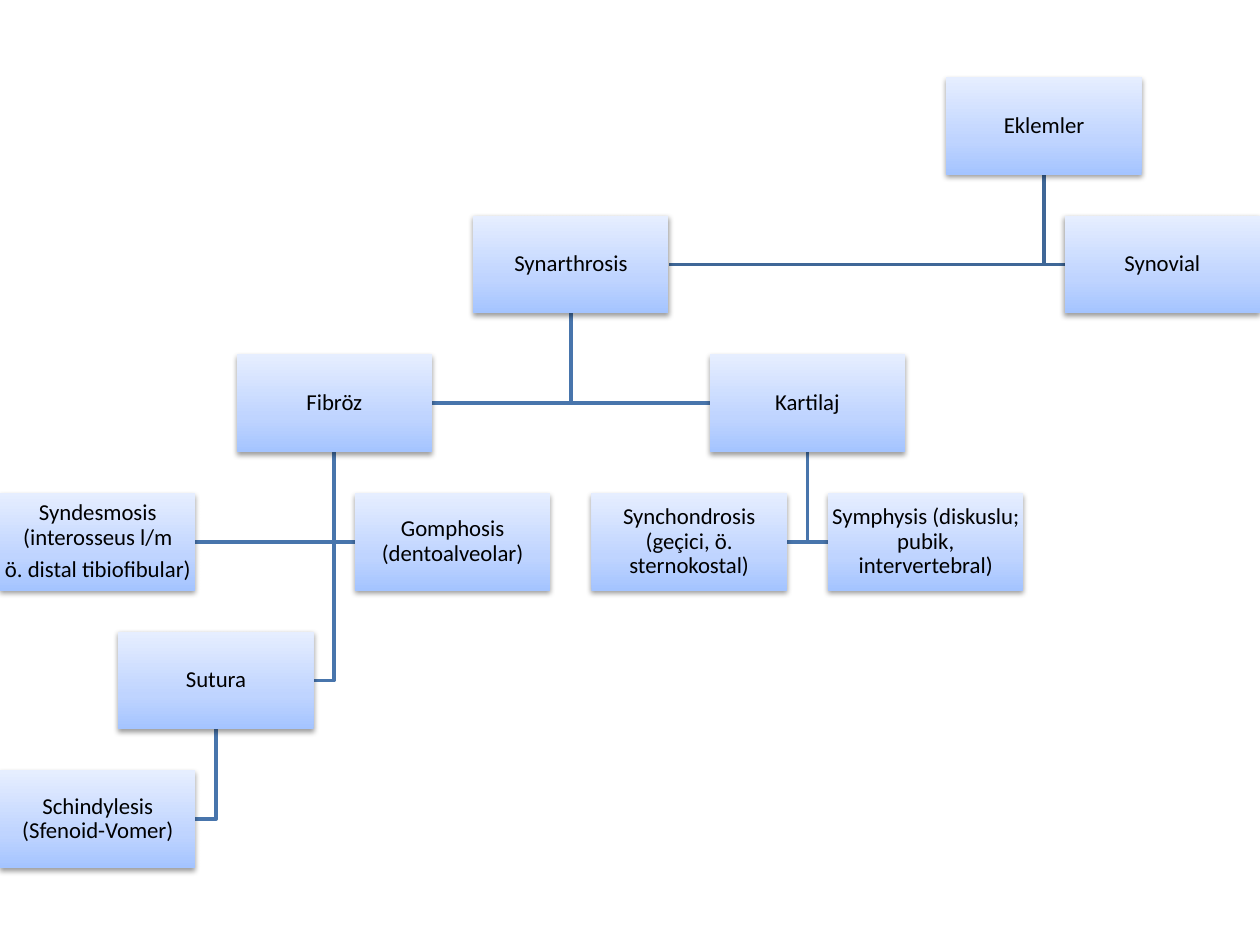
from copy import deepcopy

from lxml.etree import SubElement
from pptx import Presentation
from pptx.dml.color import RGBColor
from pptx.enum.shapes import MSO_SHAPE
from pptx.enum.text import MSO_ANCHOR, PP_ALIGN
from pptx.oxml.ns import qn
from pptx.util import Cm, Pt

COLORS = {
    "bottom": "A4C4FF",
    "middle": "BFD4FF",
    "top": "E6EEFF",
    "root_link": "3F6797",
    "link": "4875AC",
    "text": "000000",
    "shadow": "000000",
}
STOPS = [(0, "bottom"), (0.35, "middle"), (1, "top")]
BOX_W, BOX_H = Cm(3.94), Cm(1.97)
ROOT = "Eklemler"
COLUMNS, ROWS = 10, 6

# name: (column, row, parent, paragraphs)
NODES = {
    ROOT: (8, 0, None, [ROOT]),
    "Synarthrosis": (4, 1, ROOT, ["Synarthrosis"]),
    "Synovial": (9, 1, ROOT, ["Synovial"]),
    "Fibröz": (2, 2, "Synarthrosis", ["Fibröz"]),
    "Kartilaj": (6, 2, "Synarthrosis", ["Kartilaj"]),
    "Syndesmosis": (0, 3, "Fibröz",
                    ["Syndesmosis (interosseus l/m", "ö. distal tibiofibular)"]),
    "Gomphosis": (3, 3, "Fibröz", ["Gomphosis (dentoalveolar)"]),
    "Sutura": (1, 4, "Fibröz", ["Sutura"]),
    "Schindylesis": (0, 5, "Sutura", ["Schindylesis (Sfenoid-Vomer)"]),
    "Synchondrosis": (5, 3, "Kartilaj", ["Synchondrosis (geçici, ö. sternokostal)"]),
    "Symphysis": (7, 3, "Kartilaj", ["Symphysis (diskuslu; pubik, intervertebral)"]),
}


def rgb(name):
    """Return the named colour."""
    return RGBColor.from_string(COLORS[name])


def fill_gradient(sp):
    """Fill a shape with the three-stop vertical gradient."""
    sp.fill.gradient()
    sp.fill.gradient_angle = 90
    stops = sp._element.spPr.find(qn("a:gradFill")).find(qn("a:gsLst"))
    stops.append(deepcopy(stops[0]))
    for stop, (position, color) in zip(sp.fill.gradient_stops, STOPS):
        stop.position = position
        stop.color.rgb = rgb(color)


def add_shadow(sp):
    """Give a shape a soft shadow below it."""
    sp.shadow.inherit = False
    effects = sp._element.spPr.find(qn("a:effectLst"))
    shadow = SubElement(effects, qn("a:outerShdw"), blurRad="40000",
                        dist="20000", dir="5400000", rotWithShape="0")
    color = SubElement(shadow, qn("a:srgbClr"), val=COLORS["shadow"])
    SubElement(color, qn("a:alpha"), val="38000")


def add_node(slide, left, top, lines):
    """Draw one labelled box of the tree."""
    sp = slide.shapes.add_shape(MSO_SHAPE.RECTANGLE, left, top, BOX_W, BOX_H)
    fill_gradient(sp)
    sp.line.fill.background()
    add_shadow(sp)
    tf = sp.text_frame
    tf.word_wrap = True
    tf.vertical_anchor = MSO_ANCHOR.MIDDLE
    tf.margin_left = tf.margin_right = tf.margin_top = tf.margin_bottom = Cm(0.02)
    for i, line in enumerate(lines):
        p = tf.add_paragraph() if i else tf.paragraphs[0]
        p.text = line
        p.alignment = PP_ALIGN.CENTER
        p.line_spacing = 0.9
        p.space_after = Pt(4.5)
        p.font.name = "Calibri"
        p.font.size = Pt(13)
        p.font.color.rgb = rgb("text")


def add_link(slide, parent, child, color):
    """Draw an elbow from the parent's bottom to the child's near side."""
    x, y = parent[0] + BOX_W // 2, parent[1] + BOX_H
    end_x = child[0] if child[0] > parent[0] else child[0] + BOX_W
    end_y = child[1] + BOX_H // 2
    builder = slide.shapes.build_freeform(x, y)
    builder.add_line_segments([(x, end_y), (end_x, end_y)], close=False)
    sp = builder.convert_to_shape()
    sp.fill.background()
    sp.line.color.rgb = rgb(color)
    sp.line.width = Pt(2)
    sp.shadow.inherit = False


def add_tree(slide, left, top, width, height):
    """Lay the joint classification out on a grid within a box."""
    step_x = (width - BOX_W) / (COLUMNS - 1)
    step_y = (height - BOX_H) / (ROWS - 1)
    places = {name: (int(left + column * step_x), int(top + row * step_y))
              for name, (column, row, _, _) in NODES.items()}
    for name, (_, _, parent, _) in NODES.items():
        if parent:
            color = "root_link" if parent == ROOT else "link"
            add_link(slide, places[parent], places[name], color)
    for name, (_, _, _, lines) in NODES.items():
        add_node(slide, *places[name], lines)


def main():
    """Build and save the slide."""
    prs = Presentation()
    prs.slide_width, prs.slide_height = Cm(25.4), Cm(19.05)
    slide = prs.slides.add_slide(prs.slide_layouts[6])
    add_tree(slide, Cm(0), Cm(1.55), prs.slide_width, Cm(15.95))
    prs.save("out.pptx")


if __name__ == "__main__":
    main()
